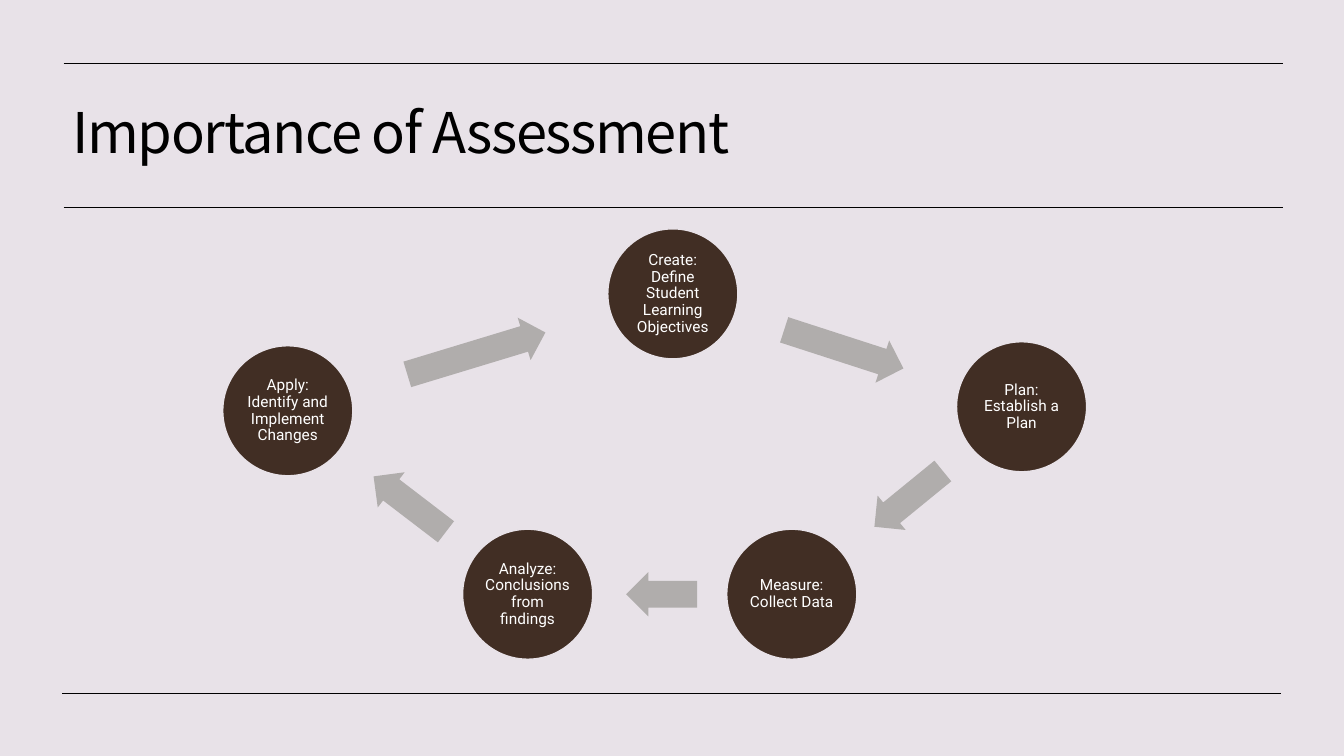
import math
from dataclasses import dataclass

from lxml import etree
from pptx import Presentation
from pptx import util as u
from pptx.dml.color import RGBColor
from pptx.enum import shapes, text
from pptx.oxml.ns import qn

WIDTH, HEIGHT = u.Inches(13.33), u.Inches(7.5)
COLORS = {"page": "E8E2E8", "ink": "000000", "step": "412E24",
          "arrow": "B0ADAC", "label": "FFFFFF"}
FONTS = {"title": "Noto Sans CJK KR", "label": "Roboto"}


def across(percent: float) -> int:
    """Share of the slide's width."""
    return round(WIDTH * percent / 100)


def down(percent: float) -> int:
    """Share of the slide's height."""
    return round(HEIGHT * percent / 100)


DIAMETER = down(17.2)
ARROW_HEIGHT = down(5.87)
ARROW_SHARE = 0.53   # part of the gap between two circles
ARROW_SETBACK = 0.015  # shift towards the start, as part of that gap


@dataclass(frozen=True)
class Rule:
    left: float
    right: float
    y: float


@dataclass(frozen=True)
class Step:
    label: str
    x: float
    y: float


RULES = [Rule(4.73, 95.48, 8.33), Rule(4.73, 95.48, 27.47), Rule(4.65, 95.33, 91.67)]
STEPS = [
    Step("Create: Define Student Learning Objectives", 50.06, 38.87),
    Step("Plan: Establish a Plan", 76.01, 53.8),
    Step("Measure: Collect Data", 58.91, 78.6),
    Step("Analyze: Conclusions from findings", 39.26, 78.6),
    Step("Apply: Identify and Implement Changes", 21.41, 54.33),
]


def color(name: str) -> RGBColor:
    return RGBColor.from_string(COLORS[name])


def write(frame, words: str, *, font: str, size: float, ink: str, align,
          inset: float = 0.1, tracking: int = 0) -> None:
    frame.word_wrap = True
    frame.auto_size = text.MSO_AUTO_SIZE.NONE
    frame.vertical_anchor = text.MSO_ANCHOR.MIDDLE
    frame.margin_left = frame.margin_right = u.Inches(inset)
    frame.margin_top = frame.margin_bottom = u.Inches(min(inset, 0.05))
    para = frame.paragraphs[0]
    para.alignment = align
    para.line_spacing = 0.9
    span = para.add_run()
    span.text = words
    span.font.name = FONTS[font]
    span.font.size = u.Pt(size)
    span.font.color.rgb = color(ink)
    if tracking:
        span.font._element.set("spc", str(tracking))


def add_rule(page, rule: Rule) -> None:
    line = page.shapes.add_connector(
        shapes.MSO_CONNECTOR.STRAIGHT, across(rule.left), down(rule.y),
        across(rule.right), down(rule.y))
    line.line.color.rgb = color("ink")
    line.line.width = u.Pt(0.5)
    etree.SubElement(line._element.spPr, qn("a:effectLst"))


def add_centered(page, kind, x: float, y: float, width: float, height: float, fill: str):
    """Add a filled preset shape around a centre point."""
    shape = page.shapes.add_shape(kind, round(x - width / 2), round(y - height / 2),
                                  round(width), round(height))
    shape.shadow.inherit = False
    shape.fill.solid()
    shape.fill.fore_color.rgb = color(fill)
    shape.line.fill.background()
    return shape


def add_step(page, step: Step) -> None:
    circle = add_centered(page, shapes.MSO_SHAPE.OVAL, across(step.x), down(step.y),
                          DIAMETER, DIAMETER, "step")
    circle.line.color.rgb = color("page")
    circle.line.width = u.Pt(1)
    write(circle.text_frame, step.label, font="label", size=11, ink="label",
          align=text.PP_ALIGN.CENTER, inset=0.02)


def add_arrow(page, start: Step, end: Step) -> None:
    x, y = across(start.x), down(start.y)
    run, drop = across(end.x) - x, down(end.y) - y
    distance = math.hypot(run, drop)
    gap = distance - DIAMETER
    share = 0.5 - ARROW_SETBACK * gap / distance
    arrow = add_centered(page, shapes.MSO_SHAPE.RIGHT_ARROW, x + run * share,
                         y + drop * share, gap * ARROW_SHARE, ARROW_HEIGHT, "arrow")
    arrow.adjustments[0] = 0.6
    arrow.adjustments[1] = 0.5
    arrow.rotation = math.degrees(math.atan2(drop, run)) % 360


def main() -> None:
    deck = Presentation()
    deck.slide_width, deck.slide_height = WIDTH, HEIGHT
    page = deck.slides.add_slide(deck.slide_layouts.get_by_name("Title Only"))
    page.background.fill.solid()
    page.background.fill.fore_color.rgb = color("page")

    for rule in RULES:
        add_rule(page, rule)

    title = page.shapes.title
    title.left, title.top = across(4.65), down(10)
    title.width, title.height = across(90.62), down(25.87) - down(10) + down(10)
    write(title.text_frame, "Importance of Assessment", font="title", size=40,
          ink="ink", align=text.PP_ALIGN.LEFT, tracking=-100)
    title.height = down(15.87)

    for start, end in zip(STEPS, STEPS[1:] + STEPS[:1]):
        add_step(page, start)
        add_arrow(page, start, end)

    deck.save("out.pptx")


if __name__ == "__main__":
    main()
